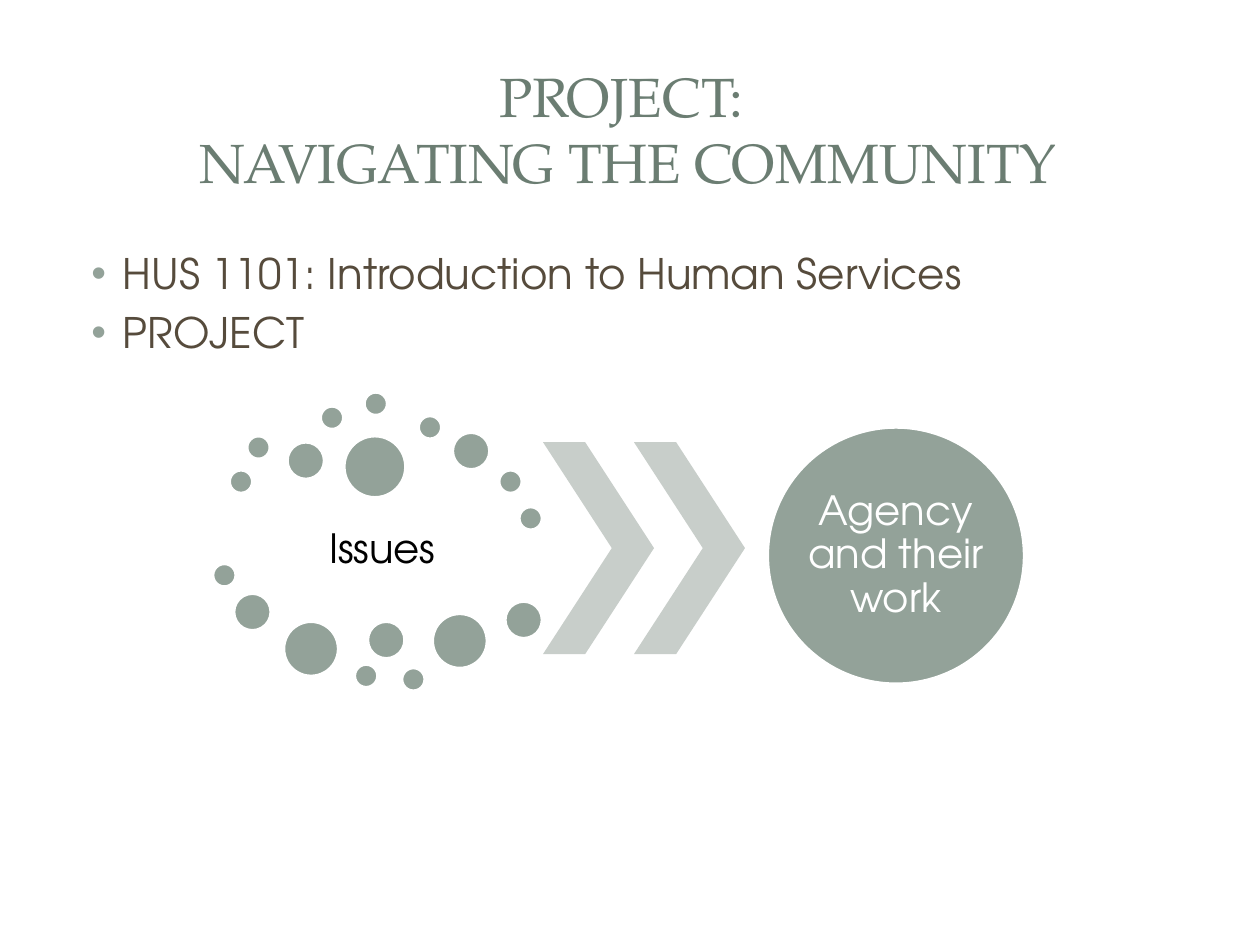
"""Build the slide that introduces the community navigation project."""
from dataclasses import dataclass

from lxml import etree
from pptx import Presentation
from pptx.dml.color import RGBColor
from pptx.enum.shapes import MSO_SHAPE
from pptx.enum.text import MSO_ANCHOR, MSO_AUTO_SIZE, PP_ALIGN
from pptx.oxml.ns import qn
from pptx.shapes.autoshape import Shape
from pptx.slide import Slide
from pptx.text.text import TextFrame, _Paragraph
from pptx.util import Pt

OVAL = MSO_SHAPE.OVAL
CHEVRON = MSO_SHAPE.CHEVRON
MIDDLE = MSO_ANCHOR.MIDDLE
TOP = MSO_ANCHOR.TOP
CENTER = PP_ALIGN.CENTER
LEFT = PP_ALIGN.LEFT
NO_AUTOFIT = MSO_AUTO_SIZE.NONE

COLORS = {
    "title": "6B7D72",
    "body": "564B3C",
    "sage": "93A299",
    "pale": "C8CECA",
    "black": "000000",
    "white": "FFFFFF",
}
HEADING_FONT = "TeX Gyre Pagella"
BODY_FONT = "TeX Gyre Adventor"
SMALL, MEDIUM, LARGE, LARGEST = 13.5, 21.5, 31.5, 35.5


@dataclass(frozen=True)
class Box:
    left: float
    top: float
    width: float
    height: float


@dataclass(frozen=True)
class Dot:
    left: float
    top: float
    diameter: float


ISSUE_DOTS = [
    Dot(131, 268.5, SMALL), Dot(141, 249, SMALL), Dot(164, 252.5, MEDIUM),
    Dot(183, 232, SMALL), Dot(208, 224, SMALL), Dot(239, 237.5, SMALL),
    Dot(258.5, 247, MEDIUM), Dot(285, 268.5, SMALL), Dot(296.5, 289.5, SMALL),
    Dot(196.5, 249, LARGEST), Dot(121.5, 322, SMALL), Dot(133.5, 339, MEDIUM),
    Dot(162, 355, LARGE), Dot(202.5, 379.5, SMALL), Dot(210, 355, MEDIUM),
    Dot(229.5, 381.5, SMALL), Dot(247, 350.5, LARGE), Dot(288.5, 343.5, MEDIUM),
]


def rgb(color: str) -> RGBColor:
    return RGBColor.from_string(COLORS[color])


def place(shape: Shape, box: Box) -> None:
    shape.left, shape.top = Pt(box.left), Pt(box.top)
    shape.width, shape.height = Pt(box.width), Pt(box.height)


def style(paragraph: _Paragraph, font: str, size: float, color: str, align: PP_ALIGN) -> None:
    paragraph.alignment = align
    paragraph.font.name = font
    paragraph.font.size = Pt(size)
    paragraph.font.color.rgb = rgb(color)


def add_bullet(paragraph: _Paragraph) -> None:
    properties = paragraph._p.get_or_add_pPr()
    properties.set("marL", str(Pt(27)))
    properties.set("indent", str(Pt(-18)))
    bullet_color = etree.SubElement(properties, qn("a:buClr"))
    etree.SubElement(bullet_color, qn("a:srgbClr"), val=COLORS["sage"])
    etree.SubElement(properties, qn("a:buChar"), char="•")


def add_filled(slide: Slide, kind: MSO_SHAPE, box: Box, color: str, outlined: bool) -> Shape:
    shape = slide.shapes.add_shape(
        kind, Pt(box.left), Pt(box.top), Pt(box.width), Pt(box.height))
    shape.shadow.inherit = False
    shape.fill.solid()
    shape.fill.fore_color.rgb = rgb(color)
    if outlined:
        shape.line.color.rgb = rgb("white")
        shape.line.width = Pt(2)
    else:
        shape.line.fill.background()
    return shape


def write_label(frame: TextFrame, text: str, color: str, inset: float) -> None:
    frame.word_wrap = True
    frame.vertical_anchor = MIDDLE
    frame.margin_left = frame.margin_right = Pt(inset)
    frame.margin_top = frame.margin_bottom = Pt(inset)
    label = frame.paragraphs[0]
    label.text = text
    label.line_spacing = 0.9
    style(label, BODY_FONT, 23, color, CENTER)


def write_title(slide: Slide) -> None:
    title = slide.shapes.title
    place(title, Box(34, 32.5, 650, 82))
    frame = title.text_frame
    frame.text = "PROJECT: \vNAVIGATING THE COMMUNITY"
    frame.vertical_anchor = MIDDLE
    frame.auto_size = NO_AUTOFIT
    style(frame.paragraphs[0], HEADING_FONT, 31.5, "title", CENTER)


def write_body(slide: Slide) -> None:
    body = slide.placeholders[1]
    place(body, Box(36, 138, 648, 344))
    frame = body.text_frame
    frame.text = "HUS 1101: Introduction to Human Services\nPROJECT"
    frame.vertical_anchor = TOP
    frame.auto_size = NO_AUTOFIT
    for index, item in enumerate(frame.paragraphs):
        add_bullet(item)
        item.space_before = Pt(4.8 if index else 0)
        style(item, BODY_FONT, 24, "body", LEFT)


def draw_diagram(slide: Slide) -> None:
    issues = slide.shapes.add_textbox(Pt(132), Pt(286), Pt(173), Pt(57))
    write_label(issues.text_frame, "Issues", "black", 2)
    for dot in ISSUE_DOTS:
        add_filled(slide, OVAL, Box(dot.left, dot.top, dot.diameter, dot.diameter),
                   "sage", True)
    for step in range(2):
        chevron = add_filled(slide, CHEVRON, Box(310.3 + 52 * step, 252.7, 63.4, 121),
                             "pale", False)
        chevron.adjustments[0] = 0.62
    agency = add_filled(slide, OVAL, Box(438.5, 244, 147, 147), "sage", True)
    write_label(agency.text_frame, "Agency and their work", "white", 0)


def main() -> None:
    presentation = Presentation()
    presentation.slide_width, presentation.slide_height = Pt(720), Pt(540)
    slide = presentation.slides.add_slide(presentation.slide_layouts[1])
    write_title(slide)
    write_body(slide)
    draw_diagram(slide)
    presentation.save("out.pptx")


if __name__ == "__main__":
    main()
